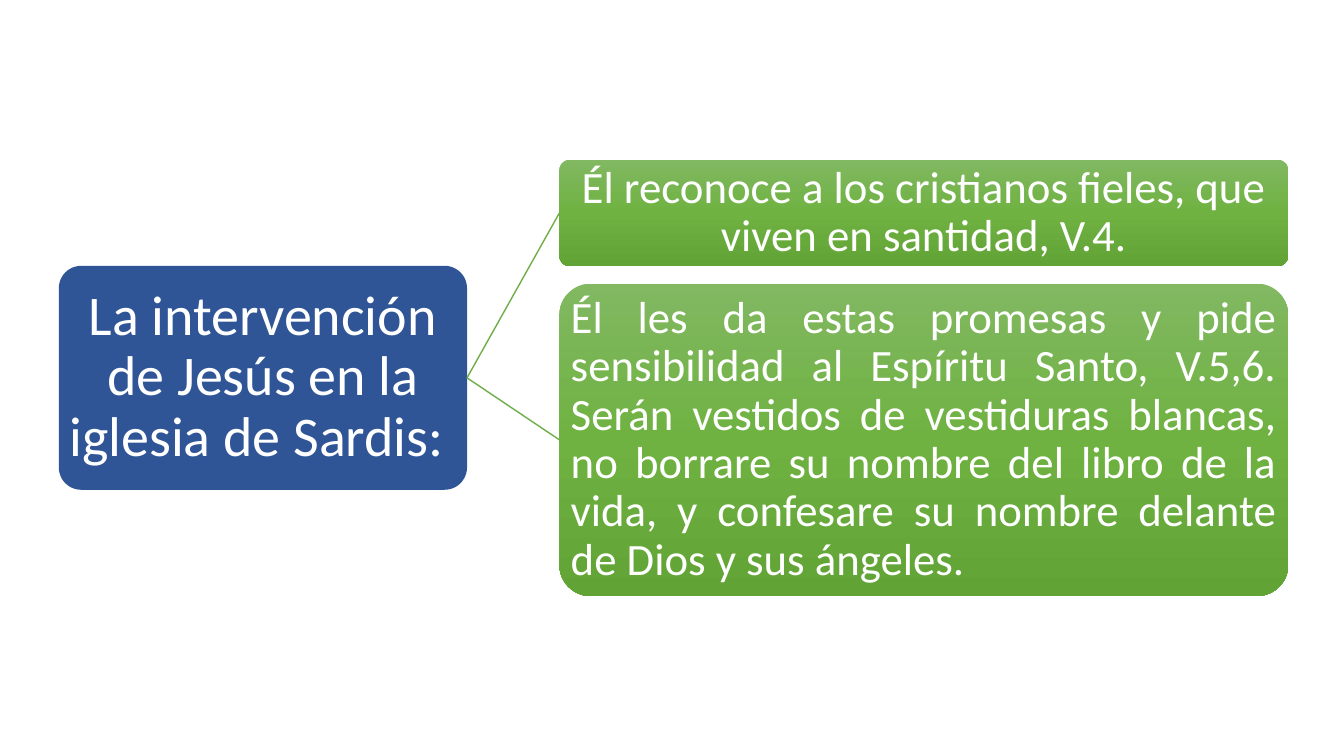
from copy import deepcopy

from lxml import etree
from pptx import Presentation
from pptx.dml.color import RGBColor
from pptx.enum.shapes import MSO_CONNECTOR, MSO_SHAPE
from pptx.enum.text import MSO_ANCHOR, PP_ALIGN
from pptx.oxml.ns import qn
from pptx.util import Pt

ROUND_RECT = MSO_SHAPE.ROUNDED_RECTANGLE
STRAIGHT = MSO_CONNECTOR.STRAIGHT
MIDDLE = MSO_ANCHOR.MIDDLE
CENTER, JUSTIFY = PP_ALIGN.CENTER, PP_ALIGN.JUSTIFY
RIGHT_SIDE, LEFT_SIDE = 3, 1

COLORS = {
    "topic": "2F5597",
    "point_top": "81B861",
    "point_mid": "6FB242",
    "point_bottom": "62A336",
    "link": "70AD47",
    "text": "FFFFFF",
}
FONT = "Calibri"

TOPIC = "La intervención de Jesús en la iglesia de Sardis: "
# Text, alignment and height of each point
POINTS = [
    ("Él reconoce a los cristianos fieles, que viven en santidad, V.4.",
     CENTER, 76.2),
    ("Él les da estas promesas y pide sensibilidad al Espíritu Santo, V.5,6. "
     "Serán vestidos de vestiduras blancas, no borrare su nombre del libro de "
     "la vida, y confesare su nombre delante de Dios y sus ángeles.",
     JUSTIFY, 223.2),
]


def rgb(name):
    return RGBColor.from_string(COLORS[name])


def fill_gradient(s):
    """Three-stop vertical gradient of a point."""
    s.fill.gradient()
    s.fill.gradient_angle = 270
    first = s._element.spPr.find(".//" + qn("a:gs"))
    first.addnext(deepcopy(first))
    names = ("point_top", "point_mid", "point_bottom")
    for i, (stop, name) in enumerate(zip(s.fill.gradient_stops, names)):
        stop.position = i / 2
        stop.color.rgb = rgb(name)


def add_box(slide, box, text, size, align, inset):
    """Rounded box with white text."""
    s = slide.shapes.add_shape(ROUND_RECT, *(Pt(v) for v in box))
    s.adjustments[0] = 0.1
    s.shadow.inherit = False
    s.line.fill.background()
    tf = s.text_frame
    tf.word_wrap = True
    tf.vertical_anchor = MIDDLE
    tf.margin_left = tf.margin_right = Pt(inset)
    tf.margin_top = tf.margin_bottom = Pt(inset)
    tf.text = text
    p = tf.paragraphs[0]
    p.alignment = align
    p.line_spacing = 0.9
    font = p.runs[0].font
    font.name, font.size = FONT, Pt(size)
    font.color.rgb = rgb("text")
    return s


def add_link(slide, topic, point):
    """Line from the topic to one point."""
    c = slide.shapes.add_connector(STRAIGHT, 0, 0, 0, 0)
    c.begin_connect(topic, RIGHT_SIDE)
    c.end_connect(point, LEFT_SIDE)
    c.line.color.rgb = rgb("link")
    c.line.width = Pt(1)
    etree.SubElement(c._element.spPr, qn("a:effectLst"))


def add_tree(slide, left, top, width, height):
    """Topic on the left, points stacked on the right."""
    topic_w, topic_h, point_w, gap = 291.6, 160, 520.6, 12.4

    # Topic
    topic_box = (left, top + (height - topic_h) / 2, topic_w, topic_h)
    topic = add_box(slide, topic_box, TOPIC, 40, CENTER, 2)
    topic.fill.solid()
    topic.fill.fore_color.rgb = rgb("topic")

    # Points and their links
    y = top
    for text, align, point_h in POINTS:
        point_box = (left + width - point_w, y, point_w, point_h)
        point = add_box(slide, point_box, text, 32, align, 1.6)
        fill_gradient(point)
        add_link(slide, topic, point)
        y += point_h + gap


def main():
    prs = Presentation()
    prs.slide_width, prs.slide_height = Pt(960), Pt(540)
    slide = prs.slides.add_slide(prs.slide_layouts[6])
    add_tree(slide, 42, 114, 878.2, 311.8)
    prs.save("out.pptx")


if __name__ == "__main__":
    main()
